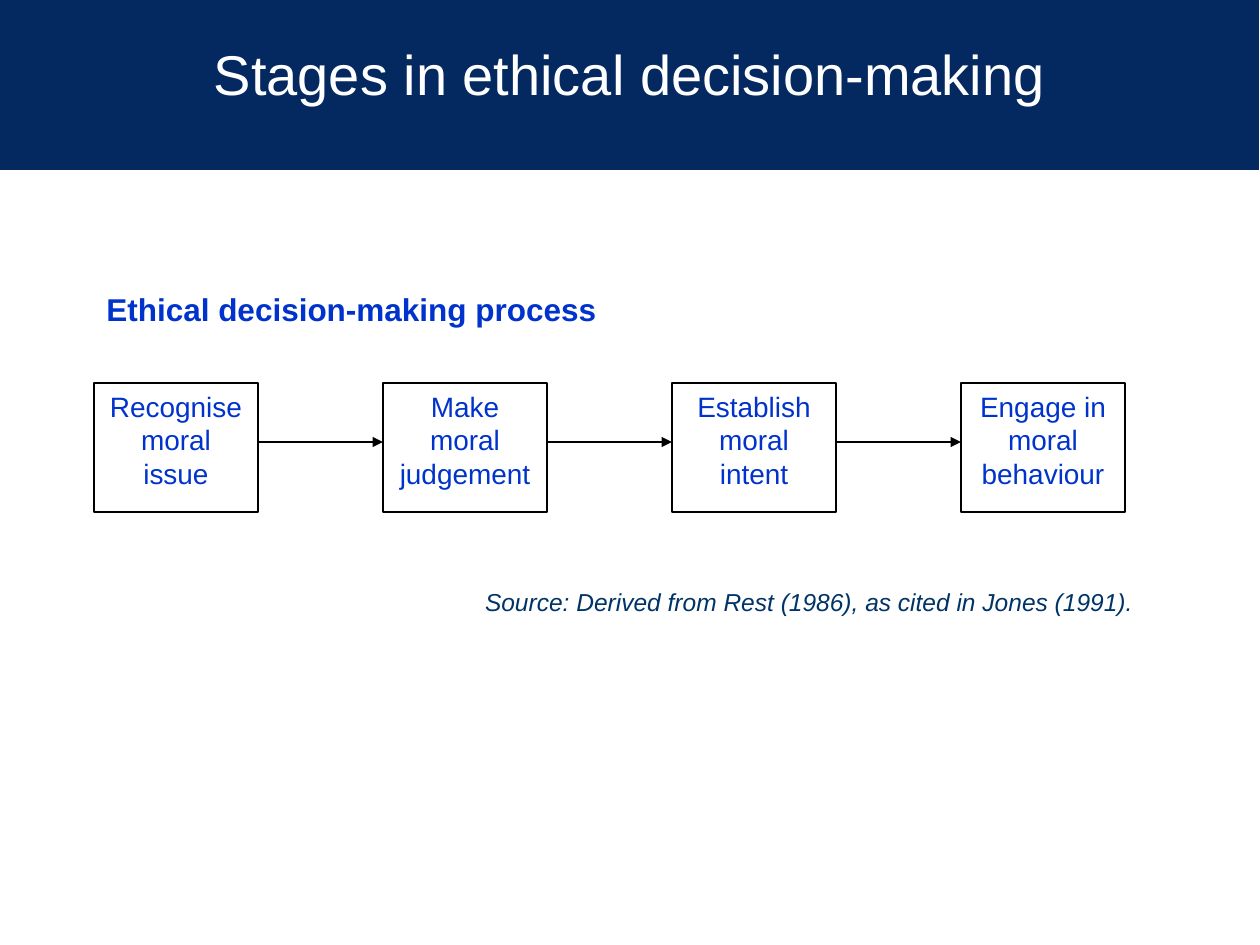
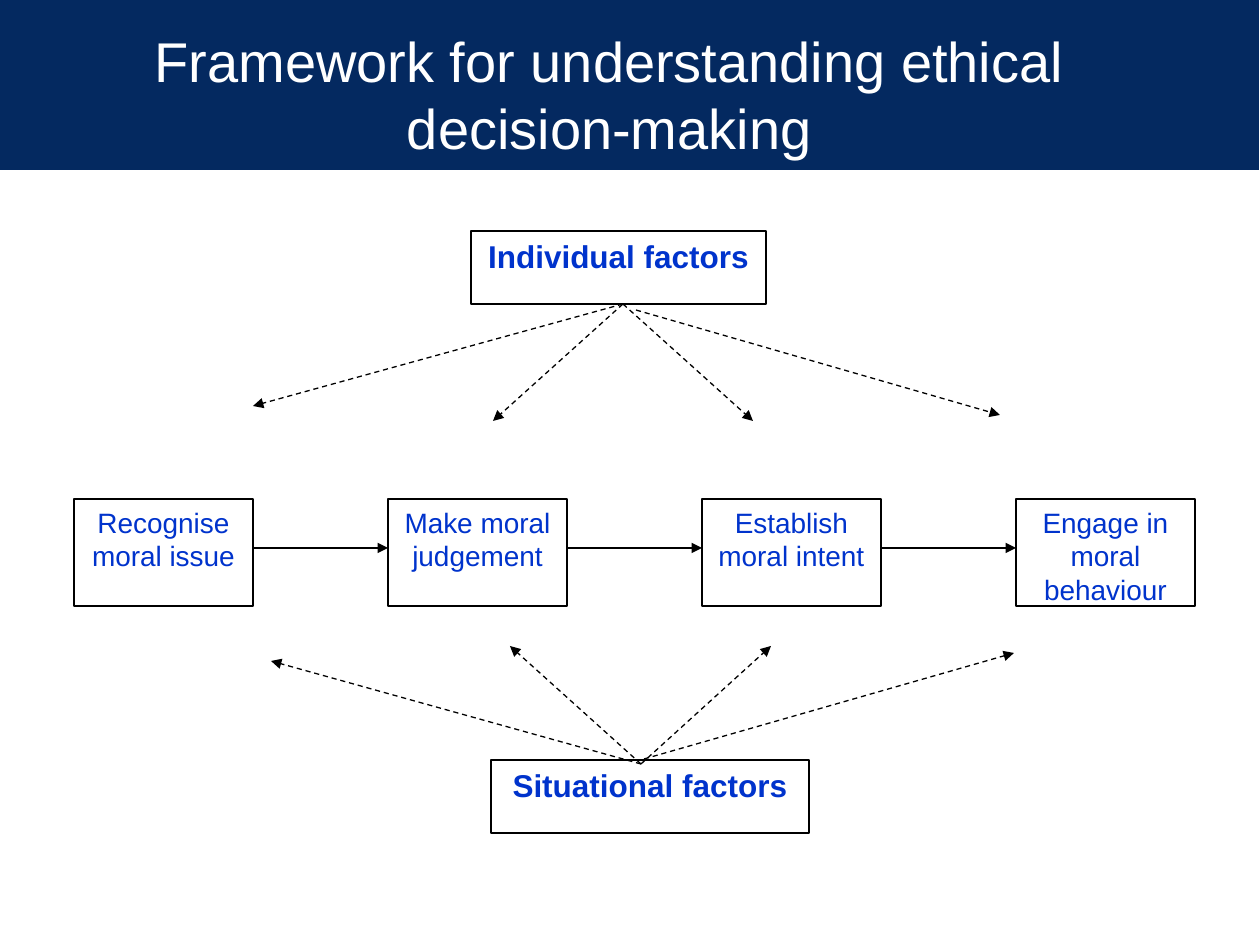
from dataclasses import dataclass
from typing import NamedTuple

from lxml.etree import SubElement
from pptx import Presentation
from pptx.dml.color import RGBColor
from pptx.enum.dml import MSO_LINE
from pptx.enum.shapes import MSO_CONNECTOR, MSO_SHAPE
from pptx.enum.text import MSO_ANCHOR, PP_ALIGN
from pptx.oxml.ns import qn
from pptx.util import Emu, Pt

PX = 914400 / 126  # EMU in one px


@dataclass(frozen=True)
class Theme:
    font: str = "Arial"
    band: str = "042960"
    title: str = "FFFFFF"
    box: str = "FFFFFF"
    line: str = "000000"
    text: str = "0033CC"
    source: str = "003366"
    title_pt: int = 32
    heading_pt: int = 18
    stage_pt: int = 16
    source_pt: int = 14
    line_pt: float = 0.75


THEME = Theme()


class Point(NamedTuple):
    x: int
    y: int


class Rect(NamedTuple):
    x: int
    y: int
    w: int
    h: int


class Style(NamedTuple):
    size: int
    color: str
    align: PP_ALIGN = PP_ALIGN.CENTER
    bold: bool = False
    italic: bool = False


class Arrow(NamedTuple):
    start: Point
    end: Point
    dashed: bool = False


class StageRow(NamedTuple):
    first: Rect
    step: int
    arrow_y: int


class Factor(NamedTuple):
    label: str
    box: Rect
    arrows: list[Arrow]


TITLE = Style(THEME.title_pt, THEME.title)
STAGE = Style(THEME.stage_pt, THEME.text)
FACTOR = Style(THEME.heading_pt, THEME.text, bold=True)
HEADING = Style(THEME.heading_pt, THEME.text, PP_ALIGN.LEFT, bold=True)
SOURCE = Style(THEME.source_pt, THEME.source, PP_ALIGN.RIGHT, italic=True)

SLIDE = Point(1260, 945)
BAND = Rect(-1, 0, 1260, 170)
STAGES = ["Recognise moral issue", "Make moral judgement",
          "Establish moral intent", "Engage in moral behaviour"]


def px(*lengths: int) -> list[Emu]:
    return [Emu(round(n * PX)) for n in lengths]


def rgb(color: str) -> RGBColor:
    return RGBColor.from_string(color)


def write(s, text: str, style: Style) -> None:
    tf = s.text_frame
    tf.word_wrap = True
    tf.vertical_anchor = MSO_ANCHOR.TOP
    p = tf.paragraphs[0]
    p.text = text
    p.alignment = style.align
    f = p.font
    f.name, f.size = THEME.font, Pt(style.size)
    f.bold, f.italic = style.bold, style.italic
    f.color.rgb = rgb(style.color)


def add_text(slide, rect: Rect, text: str, style: Style) -> None:
    write(slide.shapes.add_textbox(*px(*rect)), text, style)


def add_rect(slide, rect: Rect, fill: str):
    s = slide.shapes.add_shape(MSO_SHAPE.RECTANGLE, *px(*rect))
    s.shadow.inherit = False
    s.fill.solid()
    s.fill.fore_color.rgb = rgb(fill)
    s.line.fill.background()
    return s


def add_box(slide, rect: Rect, text: str, style: Style) -> None:
    s = add_rect(slide, rect, THEME.box)
    s.line.color.rgb = rgb(THEME.line)
    s.line.width = Pt(THEME.line_pt)
    write(s, text, style)


def add_arrow(slide, arrow: Arrow) -> None:
    c = slide.shapes.add_connector(
        MSO_CONNECTOR.STRAIGHT, *px(*arrow.start, *arrow.end))
    c.line.color.rgb = rgb(THEME.line)
    c.line.width = Pt(THEME.line_pt)
    if arrow.dashed:
        c.line.dash_style = MSO_LINE.DASH
    SubElement(c.line._get_or_add_ln(), qn("a:tailEnd"), type="triangle")
    SubElement(c._element.spPr, qn("a:effectLst"))


def add_titled_slide(prs, title: str, rect: Rect):
    slide = prs.slides.add_slide(prs.slide_layouts[6])
    add_rect(slide, BAND, THEME.band)
    add_text(slide, rect, title, TITLE)
    return slide


def add_stages(slide, row: StageRow) -> None:
    x, y, w, h = row.first
    for i, stage in enumerate(STAGES):
        left = x + i * row.step
        add_box(slide, Rect(left, y, w, h), stage, STAGE)
        if i:
            add_arrow(slide, Arrow(Point(left - row.step + w, row.arrow_y),
                                   Point(left, row.arrow_y)))


def fan(hub: Point, *ends: Point) -> list[Arrow]:
    return [Arrow(hub, end, dashed=True) for end in ends]


FACTORS = [
    Factor("Situational factors", Rect(491, 760, 318, 73),
           fan(Point(641, 764), Point(271, 661), Point(510, 646), Point(771, 646))
           + fan(Point(644, 759), Point(1014, 653))),
    Factor("Individual factors", Rect(471, 231, 295, 73),
           fan(Point(623, 304), Point(253, 406), Point(493, 421), Point(753, 421))
           + fan(Point(636, 310), Point(1000, 415))),
]


def build_stages_slide(prs) -> None:
    slide = add_titled_slide(prs, "Stages in ethical decision-making",
                             Rect(63, 33, 1134, 136))
    add_stages(slide, StageRow(Rect(94, 383, 164, 129), 289, 442))
    add_text(slide, Rect(94, 284, 704, 50),
             "Ethical decision-making process", HEADING)
    add_text(slide, Rect(94, 581, 1052, 42),
             "Source: Derived from Rest (1986), as cited in Jones (1991).", SOURCE)


def build_framework_slide(prs) -> None:
    slide = add_titled_slide(
        prs, "Framework for understanding ethical decision-making",
        Rect(74, 20, 1071, 116))
    add_stages(slide, StageRow(Rect(74, 499, 179, 107), 314, 548))
    for factor in FACTORS:
        add_box(slide, factor.box, factor.label, FACTOR)
        for arrow in factor.arrows:
            add_arrow(slide, arrow)


def main() -> None:
    prs = Presentation()
    prs.slide_width, prs.slide_height = px(*SLIDE)
    build_stages_slide(prs)
    build_framework_slide(prs)
    prs.save("out.pptx")


if __name__ == "__main__":
    main()
